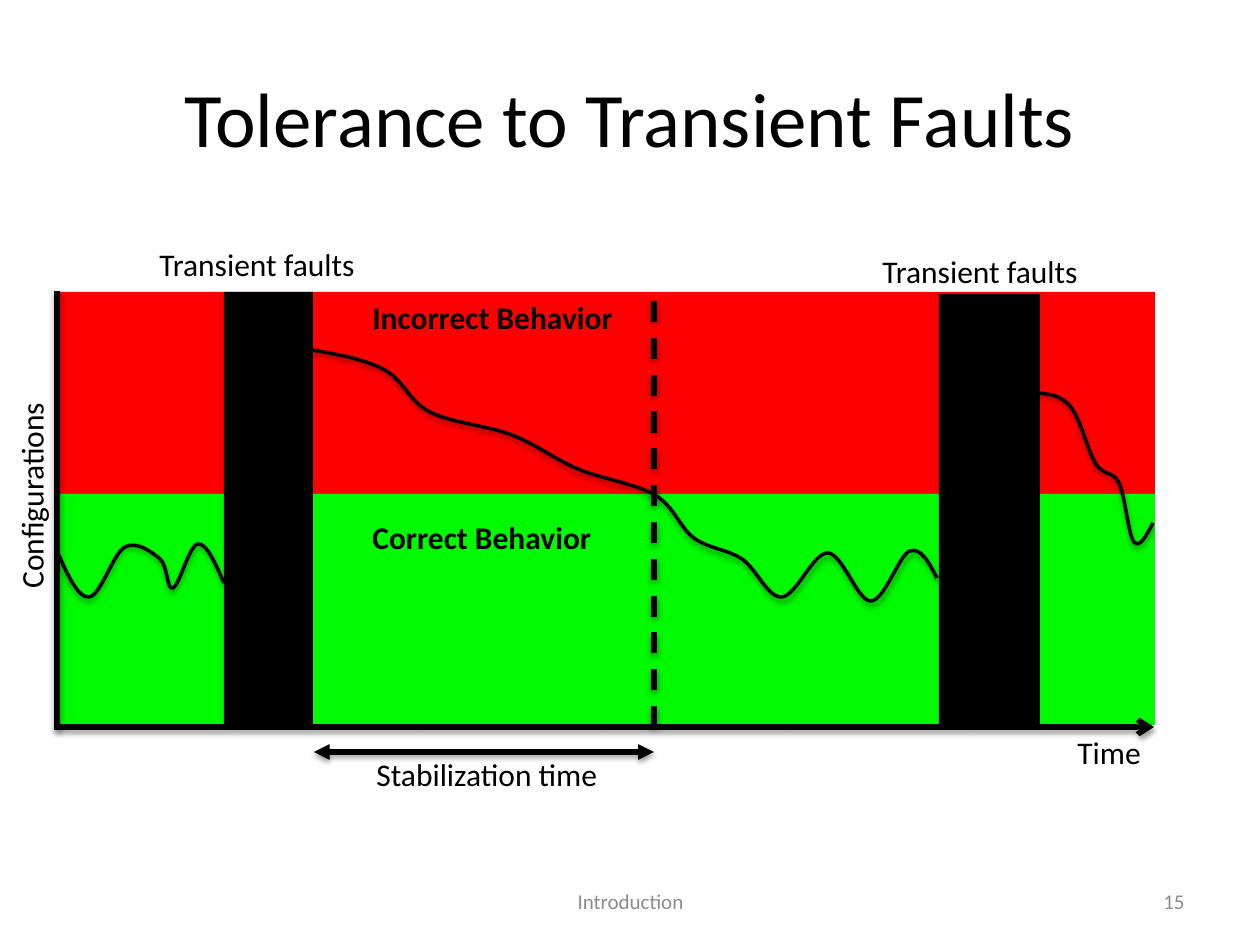
"""Build the slide on tolerance to transient faults."""
from dataclasses import dataclass

from pptx import Presentation
from pptx.dml.color import RGBColor
from pptx.enum.dml import MSO_LINE
from pptx.enum.shapes import MSO_CONNECTOR, MSO_SHAPE
from pptx.enum.text import MSO_ANCHOR, PP_ALIGN
from pptx.oxml.ns import qn
from pptx.oxml.xmlchemy import OxmlElement
from pptx.util import Emu, Pt

RECTANGLE = MSO_SHAPE.RECTANGLE
STRAIGHT = MSO_CONNECTOR.STRAIGHT
DASH = MSO_LINE.DASH
LEFT, CENTER, RIGHT = PP_ALIGN.LEFT, PP_ALIGN.CENTER, PP_ALIGN.RIGHT
TOP, MIDDLE = MSO_ANCHOR.TOP, MSO_ANCHOR.MIDDLE

EMU_PER_PX = 914400 / 126
FONT = "Calibri"
COLORS = {
    "ink": "000000",
    "incorrect": "FF0000",
    "correct": "00FA00",
    "footer": "8C8C8C",
}


@dataclass
class Area:
    x: int
    y: int
    width: int
    height: int
    color: str


@dataclass
class Line:
    start: tuple[int, int]
    end: tuple[int, int]
    head: str = ""
    tail: str = ""
    dashed: bool = False


@dataclass
class Label:
    text: str
    x: int
    y: int
    width: int
    height: int = 50
    size: int = 18
    bold: bool = False
    color: str = "ink"
    align: PP_ALIGN = LEFT
    anchor: MSO_ANCHOR = TOP
    rotation: int = 0
    wrap: bool = True


BANDS = [
    Area(57, 292, 1098, 202, "incorrect"),
    Area(57, 494, 1098, 231, "correct"),
]
FAULTS = [
    Area(224, 292, 89, 433, "ink"),
    Area(939, 294, 101, 433, "ink"),
]
VERTICAL_LINES = [
    Line((57, 730), (57, 291)),
    Line((654, 727), (654, 296), dashed=True),
]
HORIZONTAL_LINES = [
    Line((57, 727), (1154, 727), tail="arrow"),
    Line((314, 752), (654, 752), head="triangle", tail="triangle"),
]
LABELS = [
    Label("Correct Behavior", 360, 512, 246, bold=True),
    Label("Incorrect Behavior", 360, 292, 267, bold=True),
    Label("Configurations", -76, 469, 214, rotation=270),
    Label("Time", 1065, 727, 89),
    Label("Stabilization time", 364, 749, 249, wrap=False),
    Label("Transient faults", 147, 239, 243),
    Label("Transient faults", 870, 246, 243),
    Label("Introduction", 431, 876, 399, size=12, color="footer",
          align=CENTER, anchor=MIDDLE),
    Label("15", 903, 876, 294, size=12, color="footer",
          align=RIGHT, anchor=MIDDLE),
]
TRACES = [
    [(57, 551), (89, 597), (125, 547), (160, 559), (173, 588), (198, 544),
     (224, 583)],
    [(306, 349), (383, 369), (430, 412), (512, 435), (578, 469), (655, 495),
     (694, 538), (742, 559), (782, 597), (828, 553), (871, 601), (910, 551),
     (937, 578)],
    [(1034, 393), (1070, 406), (1096, 464), (1119, 483), (1134, 542),
     (1153, 523)],
]


def px(length: float) -> Emu:
    return Emu(round(length * EMU_PER_PX))


def rgb(name: str) -> RGBColor:
    return RGBColor.from_string(COLORS[name])


def add_child(parent, tag: str, **attributes):
    child = OxmlElement(tag)
    for name, value in attributes.items():
        child.set(name, str(value))
    parent.append(child)
    return child


def add_shadow(shape, distance: int, alpha: int) -> None:
    effects = add_child(shape._element.spPr, "a:effectLst")
    shadow = add_child(effects, "a:outerShdw", blurRad=40000, dist=distance,
                       dir=5400000, rotWithShape=0)
    color = add_child(shadow, "a:srgbClr", val=COLORS["ink"])
    add_child(color, "a:alpha", val=alpha * 1000)


def format_text(frame, text: str, size: int, color: str, bold: bool,
                align: PP_ALIGN) -> None:
    para = frame.paragraphs[0]
    para.alignment = align
    span = para.add_run()
    span.text = text
    for name, value in {"name": FONT, "size": Pt(size), "bold": bold}.items():
        setattr(span.font, name, value)
    span.font.color.rgb = rgb(color)


def draw_area(page, area: Area) -> None:
    box = page.shapes.add_shape(
        RECTANGLE, px(area.x), px(area.y), px(area.width), px(area.height))
    box.shadow.inherit = False
    box.fill.solid()
    box.fill.fore_color.rgb = rgb(area.color)
    box.line.fill.background()


def draw_line(page, line: Line) -> None:
    connector = page.shapes.add_connector(
        STRAIGHT, *map(px, line.start + line.end))
    connector.line.color.rgb = rgb("ink")
    connector.line.width = Pt(3)
    if line.dashed:
        connector.line.dash_style = DASH
    outline = connector._element.spPr.find(qn("a:ln"))
    for tag, kind in (("a:headEnd", line.head), ("a:tailEnd", line.tail)):
        if kind:
            add_child(outline, tag, type=kind)
    add_shadow(connector, 20000, 38)


def draw_label(page, label: Label) -> None:
    box = page.shapes.add_textbox(
        px(label.x), px(label.y), px(label.width), px(label.height))
    box.rotation = label.rotation
    frame = box.text_frame
    frame.word_wrap = label.wrap
    frame.vertical_anchor = label.anchor
    format_text(frame, label.text, label.size, label.color, label.bold,
                label.align)


def midpoint(first: tuple, second: tuple) -> tuple:
    return tuple((a + b) / 2 for a, b in zip(first, second))


def smooth_points(knots: list) -> list:
    """Return control, control and knot for each curve segment."""
    slopes = [tuple((b - a) / 6 for a, b in zip(before, after))
              for before, after in zip(knots, knots[2:])]
    inward = [tuple(k - s for k, s in zip(knot, slope))
              for knot, slope in zip(knots[1:], slopes)]
    outward = [tuple(k + s for k, s in zip(knot, slope))
               for knot, slope in zip(knots[1:], slopes)]
    outward.insert(0, midpoint(knots[0], inward[0]))
    inward.append(midpoint(outward[-1], knots[-1]))
    return [point for segment in zip(outward, inward, knots[1:])
            for point in segment]


def draw_trace(page, knots: list) -> None:
    builder = page.shapes.build_freeform(*map(px, knots[0]))
    builder.add_line_segments(
        [tuple(map(px, point)) for point in smooth_points(knots)], close=False)
    trace = builder.convert_to_shape()
    outline = next(trace._element.iter(qn("a:path")))
    steps = outline.findall(qn("a:lnTo"))
    for index in range(0, len(steps), 3):
        curve = add_child(outline, "a:cubicBezTo")
        for step in steps[index:index + 3]:
            curve.append(step[0])
            outline.remove(step)
    trace.fill.background()
    trace.line.color.rgb = rgb("ink")
    trace.line.width = Pt(2)
    add_shadow(trace, 23000, 35)


def main() -> None:
    deck = Presentation()
    deck.slide_width, deck.slide_height = px(1260), px(945)
    page = deck.slides.add_slide(deck.slide_layouts[5])
    title = page.shapes.title
    bounds = {"left": 63, "top": 38, "width": 1134, "height": 158}
    for name, value in bounds.items():
        setattr(title, name, px(value))
    title.text_frame.vertical_anchor = MIDDLE
    format_text(title.text_frame, "Tolerance to Transient Faults", 44, "ink",
                False, CENTER)
    for draw, items in (
        (draw_area, BANDS), (draw_line, VERTICAL_LINES), (draw_area, FAULTS),
        (draw_line, HORIZONTAL_LINES), (draw_label, LABELS),
        (draw_trace, TRACES),
    ):
        for item in items:
            draw(page, item)
    deck.save("out.pptx")


if __name__ == "__main__":
    main()
